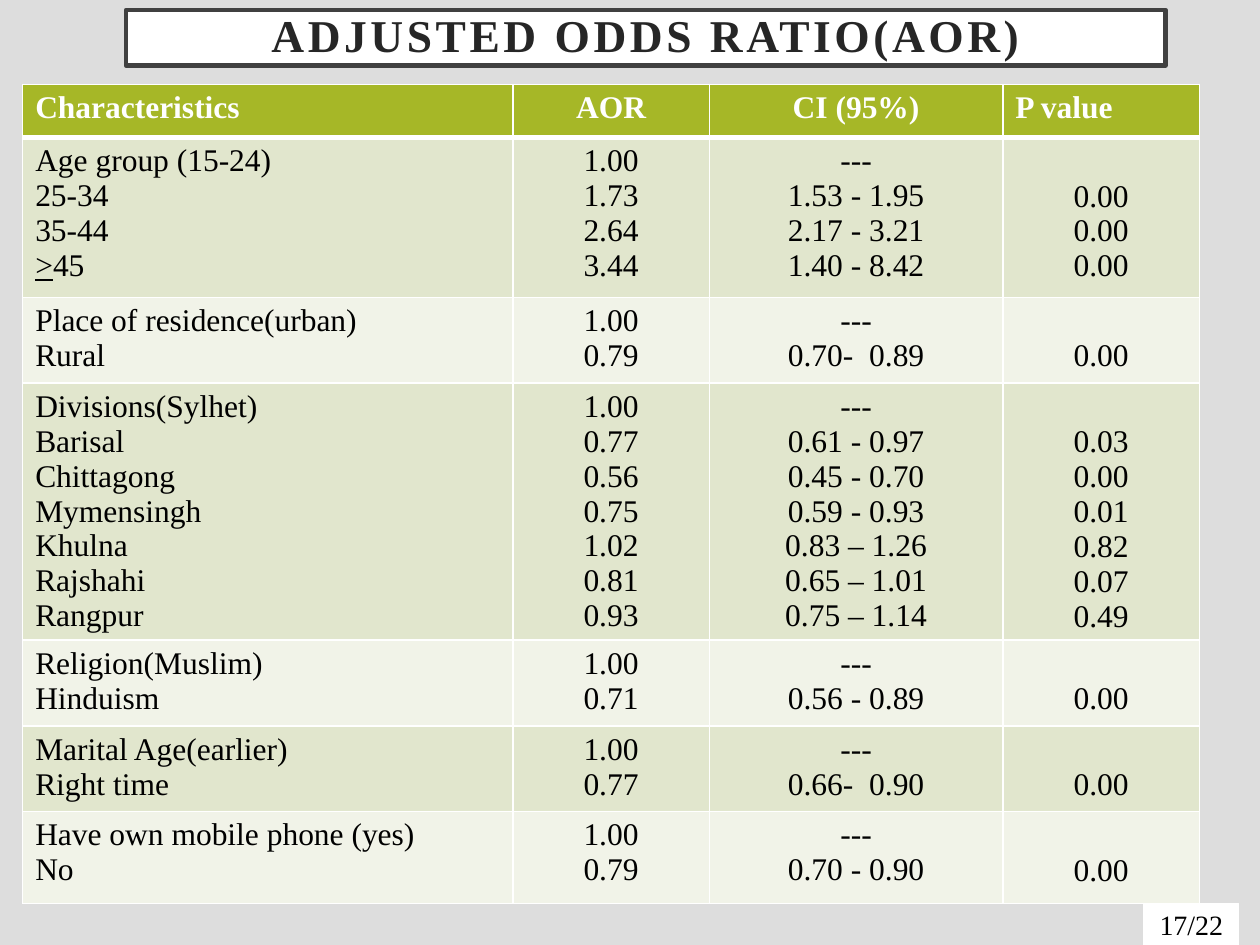
import pptx
import pptx.dml.color
import pptx.enum.shapes
import pptx.enum.text
import pptx.oxml.ns
import pptx.util
from dataclasses import dataclass
from lxml import etree

Inches = pptx.util.Inches
Pt = pptx.util.Pt
ALIGN = pptx.enum.text.PP_ALIGN
MIDDLE = pptx.enum.text.MSO_ANCHOR.MIDDLE


@dataclass(frozen=True)
class Theme:
    font: str = "Times New Roman"
    background: str = "DDDDDD"
    white: str = "FFFFFF"
    black: str = "000000"
    title_text: str = "262626"
    title_line: str = "404040"
    header: str = "A6B727"
    bands: tuple = ("E1E6CD", "F1F3E8")
    title_size: int = 26
    table_size: int = 18
    page_size: int = 16
    cell_inset: float = 0.05
    table_line: float = 0.28


def rgb(value):
    return pptx.dml.color.RGBColor.from_string(value)


class SlideBuilder:
    def __init__(self, slide, theme):
        self.slide = slide
        self.theme = theme
        fill = slide.background.fill
        fill.solid()
        fill.fore_color.rgb = rgb(theme.background)

    def run(self, paragraph, text, size, color, bold=False, underline=False):
        run = paragraph.add_run()
        run.text = text
        font = run.font
        font.name, font.size, font.bold = self.theme.font, Pt(size), bold
        font.underline = underline
        font.color.rgb = rgb(color)
        return run

    def box(self, place, text, size, color, line, width, bold=False, tracking=0):
        box = self.slide.shapes.add_shape(
            pptx.enum.shapes.MSO_SHAPE.RECTANGLE, *map(Inches, place))
        box.shadow.inherit = False
        box.fill.solid()
        box.fill.fore_color.rgb = rgb(self.theme.white)
        box.line.color.rgb = rgb(line)
        box.line.width = Pt(width)
        frame = box.text_frame
        frame.word_wrap = True
        frame.vertical_anchor = MIDDLE
        frame.margin_top = frame.margin_bottom = 0
        paragraph = frame.paragraphs[0]
        paragraph.alignment = ALIGN.CENTER
        run = self.run(paragraph, text, size, color, bold)
        if tracking:
            paragraph.line_spacing = 0.9
            run.font._element.set("spc", str(tracking * 100))

    def borders(self, cell, bottom):
        properties = cell._tc.get_or_add_tcPr()
        qn = pptx.oxml.ns.qn
        for side, width in (("L", 1), ("R", 1), ("T", 1), ("B", bottom)):
            line = etree.SubElement(properties, qn("a:ln" + side), w=str(Pt(width)))
            fill = etree.SubElement(line, qn("a:solidFill"))
            etree.SubElement(fill, qn("a:srgbClr"), val=self.theme.white)

    def cell(self, cell, lines, fill, color, align, bold=False, bottom=1):
        theme = self.theme
        self.borders(cell, bottom)
        cell.fill.solid()
        cell.fill.fore_color.rgb = rgb(fill)
        filled = [line for line in lines if line]
        skipped = len(lines) - len(filled)
        cell.margin_top = Inches(theme.cell_inset + skipped * theme.table_line)
        frame = cell.text_frame
        for index, line in enumerate(filled):
            paragraph = frame.add_paragraph() if index else frame.paragraphs[0]
            paragraph.alignment = align
            if line.startswith(">"):
                self.run(paragraph, line[0], theme.table_size, color, bold, underline=True)
                line = line[1:]
            self.run(paragraph, line, theme.table_size, color, bold)

    def table(self, place, widths, heights, headings, groups):
        theme = self.theme
        table = self.slide.shapes.add_table(
            len(heights), len(widths), *map(Inches, place)).table
        table.horz_banding = False
        for column, width in zip(table.columns, widths):
            column.width = Inches(width)
        for row, height in zip(table.rows, heights):
            row.height = Inches(height)
        header_aligns = (ALIGN.LEFT, ALIGN.CENTER, ALIGN.CENTER, ALIGN.LEFT)
        for column, (heading, align) in enumerate(zip(headings, header_aligns)):
            self.cell(table.cell(0, column), [heading], theme.header,
                      theme.white, align, bold=True, bottom=3)
        for row, group in enumerate(groups, 1):
            band = theme.bands[(row - 1) % 2]
            for column, lines in enumerate(zip(*group)):
                align = ALIGN.CENTER if column else ALIGN.LEFT
                self.cell(table.cell(row, column), lines, band, theme.black, align)


HEADINGS = ("Characteristics", "AOR", "CI (95%)", "P value")
GROUPS = [
    [("Age group (15-24)", "1.00", "---", ""),
     ("25-34", "1.73", "1.53 - 1.95", "0.00"),
     ("35-44", "2.64", "2.17 - 3.21", "0.00"),
     (">45", "3.44", "1.40 - 8.42", "0.00")],
    [("Place of residence(urban)", "1.00", "---", ""),
     ("Rural", "0.79", "0.70-  0.89", "0.00")],
    [("Divisions(Sylhet)", "1.00", "---", ""),
     ("Barisal", "0.77", "0.61 - 0.97", "0.03"),
     ("Chittagong", "0.56", "0.45 - 0.70", "0.00"),
     ("Mymensingh", "0.75", "0.59 - 0.93", "0.01"),
     ("Khulna", "1.02", "0.83 – 1.26", "0.82"),
     ("Rajshahi", "0.81", "0.65 – 1.01", "0.07"),
     ("Rangpur", "0.93", "0.75 – 1.14", "0.49")],
    [("Religion(Muslim)", "1.00", "---", ""),
     ("Hinduism", "0.71", "0.56 - 0.89", "0.00")],
    [("Marital Age(earlier)", "1.00", "---", ""),
     ("Right time", "0.77", "0.66-  0.90", "0.00")],
    [("Have own mobile phone (yes)", "1.00", "---", ""),
     ("No", "0.79", "0.70 - 0.90", "0.00")],
]


def main():
    theme = Theme()
    deck = pptx.Presentation()
    deck.slide_width, deck.slide_height = Inches(10), Inches(7.5)
    builder = SlideBuilder(deck.slides.add_slide(deck.slide_layouts[6]), theme)
    builder.box((1, 0.08, 8.25, 0.44), "ADJUSTED ODDS RATIO(AOR)", theme.title_size,
                theme.title_text, theme.title_line, 2.5, bold=True, tracking=2)
    builder.table((0.18, 0.67, 9.33, 6.5), (3.89, 1.56, 2.33, 1.56),
                  (0.42, 1.27, 0.68, 2.04, 0.68, 0.68, 0.73), HEADINGS, GROUPS)
    builder.box((9.08, 7.17, 0.75, 0.33), "17/22", theme.page_size,
                theme.black, theme.white, 1)
    deck.save("out.pptx")


if __name__ == "__main__":
    main()
